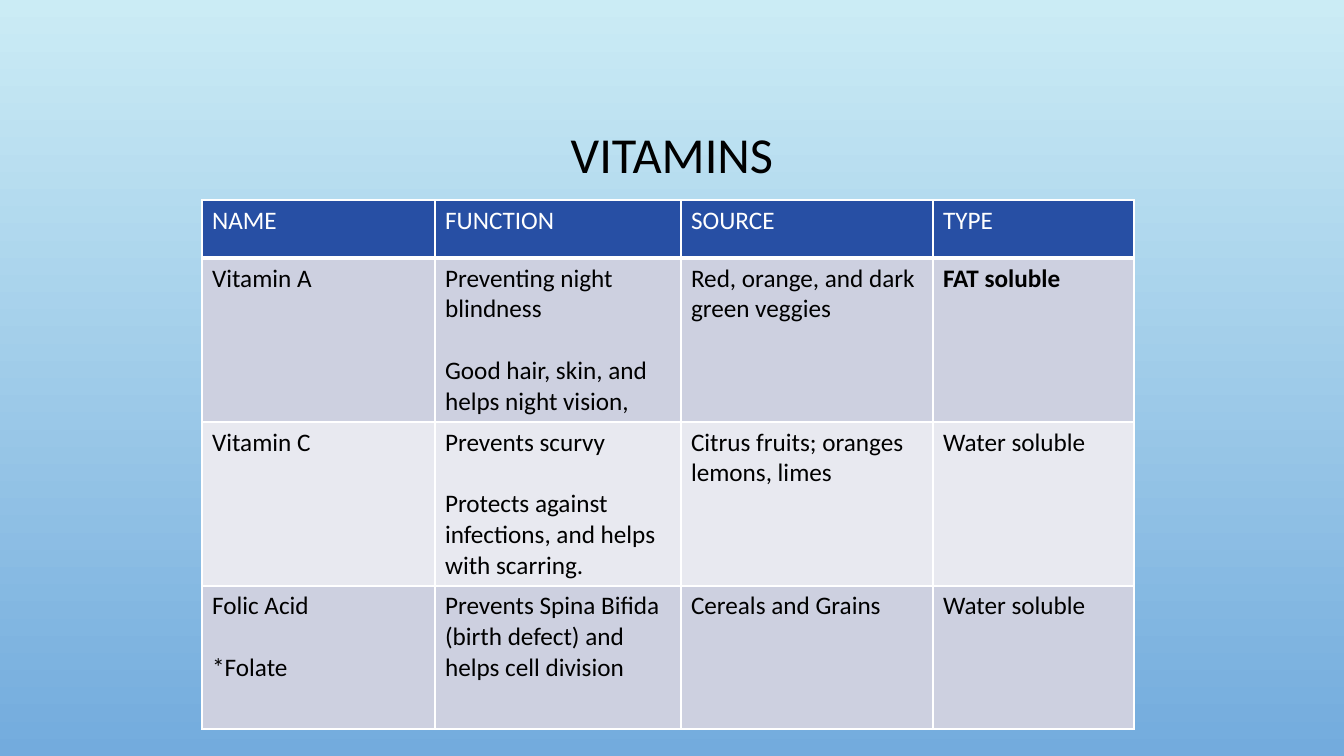
from lxml.etree import SubElement
from pptx import Presentation
from pptx.dml.color import RGBColor as Rgb
from pptx.enum.text import MSO_ANCHOR as Anchor, PP_ALIGN as Align
from pptx.oxml.ns import qn
from pptx.util import Emu, Pt

EMU_PER_PX = 914400 / 100.8
FONT = "Calibri"
COLORS = {
    "sky_top": "CBECF5",
    "sky_bottom": "73ABDD",
    "header": "274FA4",
    "band_dark": "CDD0E0",
    "band_light": "E8E9F0",
    "white": "FFFFFF",
    "black": "000000",
}
COLUMN_WIDTHS = [233, 246, 252, 201]
ROW_HEIGHTS = [58, 164, 164, 143]
BLANK_LINE = 22
VITAMINS = [
    ["NAME", "FUNCTION", "SOURCE", "TYPE"],
    ["Vitamin A",
     "Preventing night blindness\nGood hair, skin, and helps night vision,",
     "Red, orange, and dark green veggies", "FAT soluble"],
    ["Vitamin C",
     "Prevents scurvy\nProtects against infections, and helps with scarring.",
     "Citrus fruits; oranges lemons, limes", "Water soluble"],
    ["Folic Acid\n*Folate",
     "Prevents Spina Bifida (birth defect) and helps cell division",
     "Cereals and Grains", "Water soluble"],
]


def px(length):
    return Emu(round(length * EMU_PER_PX))


def color(name):
    return Rgb.from_string(COLORS[name])


def write_text(frame, text, size=18, ink="black", bold=False,
               align=Align.LEFT, line_spacing=None, gap=0):
    """Write one paragraph per line of text, with gap points between them."""
    frame.word_wrap = True
    for index, line in enumerate(text.split("\n")):
        para = frame.paragraphs[0] if index == 0 else frame.add_paragraph()
        para.alignment = align
        para.line_spacing = line_spacing
        if index:
            para.space_before = Pt(gap)
        span = para.add_run()
        span.text = line
        span.font.name = FONT
        span.font.size = Pt(size)
        span.font.bold = bold
        span.font.color.rgb = color(ink)


def paint_background(page):
    fill = page.background.fill
    fill.gradient()
    fill.gradient_angle = 270
    for stop, name in zip(fill.gradient_stops, ("sky_top", "sky_bottom")):
        stop.color.rgb = color(name)


def add_title(page, text):
    box = page.shapes.add_textbox(px(101), px(69), px(1142), px(176))
    box.text_frame.vertical_anchor = Anchor.MIDDLE
    write_text(box.text_frame, text, size=36, align=Align.CENTER,
               line_spacing=0.9)


def add_borders(cell, bottom=1):
    """Draw white cell borders; call before filling, as the XML order requires."""
    properties = cell._tc.get_or_add_tcPr()
    for side, points in (("L", 1), ("R", 1), ("T", 1), ("B", bottom)):
        line = SubElement(properties, qn(f"a:ln{side}"), w=str(Pt(points)))
        fill = SubElement(line, qn("a:solidFill"))
        SubElement(fill, qn("a:srgbClr"), val=COLORS["white"])


def add_vitamin_table(page):
    frame = page.shapes.add_table(
        len(VITAMINS), len(COLUMN_WIDTHS), px(202), px(200),
        px(sum(COLUMN_WIDTHS)), px(sum(ROW_HEIGHTS)))
    table = frame.table
    for column, width in zip(table.columns, COLUMN_WIDTHS):
        column.width = px(width)
    for row_index, (row, height) in enumerate(zip(table.rows, ROW_HEIGHTS)):
        row.height = px(height)
        is_header = row_index == 0
        band = "band_dark" if row_index % 2 else "band_light"
        for cell, text in zip(row.cells, VITAMINS[row_index]):
            add_borders(cell, bottom=3 if is_header else 1)
            cell.fill.solid()
            cell.fill.fore_color.rgb = color("header" if is_header else band)
            write_text(cell.text_frame, text, gap=BLANK_LINE,
                       ink="white" if is_header else "black",
                       bold=text.startswith("FAT"))


def main():
    deck = Presentation()
    deck.slide_width, deck.slide_height = px(1344), px(756)
    page = deck.slides.add_slide(deck.slide_layouts[6])
    paint_background(page)
    add_title(page, "VITAMINS")
    add_vitamin_table(page)
    deck.save("out.pptx")


if __name__ == "__main__":
    main()
